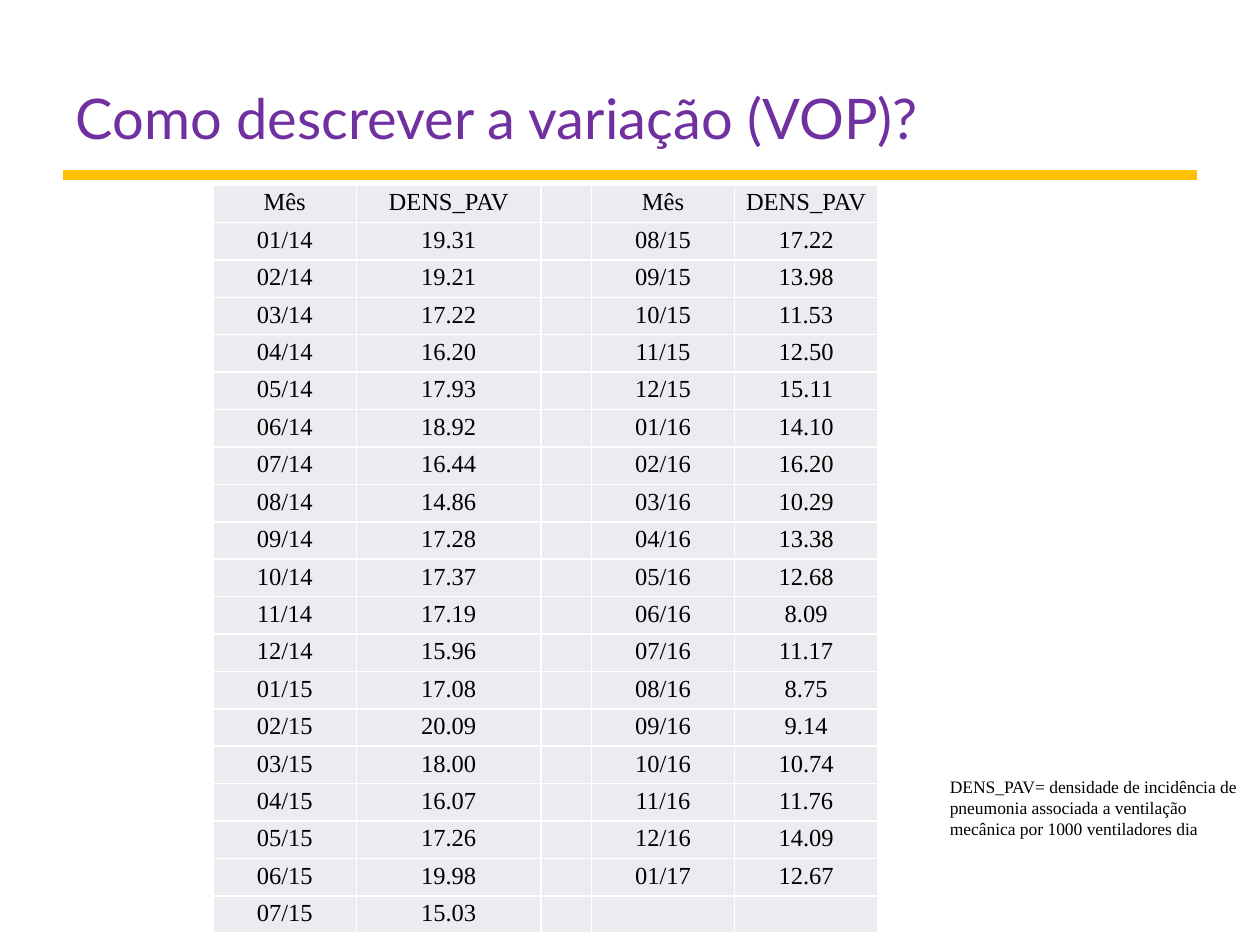
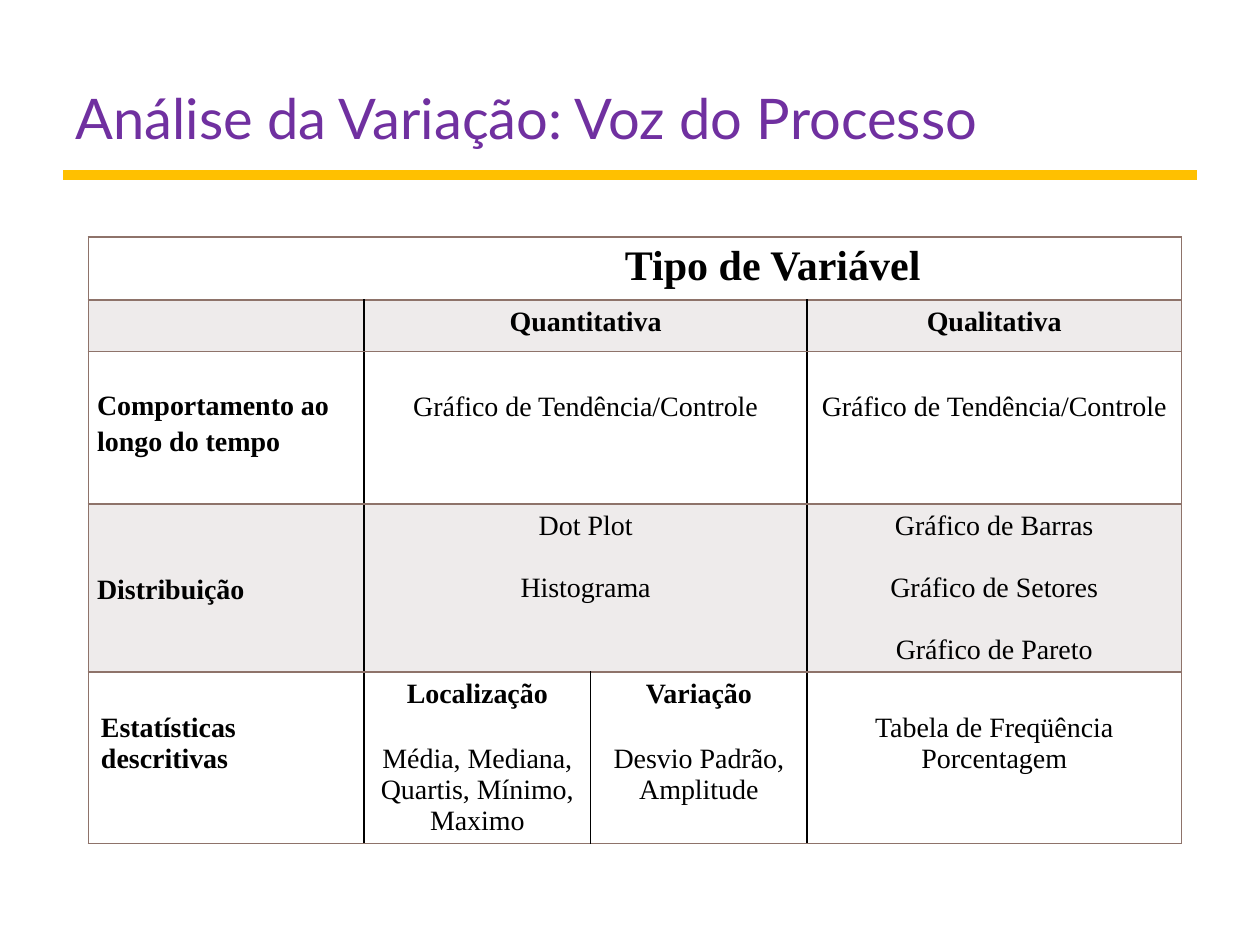
import lxml.etree
import pptx
import pptx.dml.color
import pptx.enum.shapes
import pptx.enum.text
import pptx.oxml.ns
import pptx.util

Pt = pptx.util.Pt
RGB = pptx.dml.color.RGBColor
ALIGN = pptx.enum.text.PP_ALIGN
ANCHOR = pptx.enum.text.MSO_ANCHOR
qn = pptx.oxml.ns.qn

PURPLE = RGB(0x70, 0x30, 0xA0)
GOLD = RGB(0xFF, 0xC0, 0x00)
BLACK = RGB(0x00, 0x00, 0x00)
WHITE = RGB(0xFF, 0xFF, 0xFF)
COOL_GREY = RGB(0xEB, 0xEC, 0xF0)
WARM_GREY = RGB(0xEE, 0xEB, 0xEB)
BROWN = RGB(0x8E, 0x73, 0x6A)
TITLE_FONT = "Lato"
BODY_FONT = "Times New Roman"

prs = pptx.Presentation()
prs.slide_width, prs.slide_height = Pt(720), Pt(540)


def add_text(tf, paras, size, align=ALIGN.LEFT, bold_count=0, gap=0,
             font=BODY_FONT, color=BLACK):
    for i, text in enumerate(paras):
        p = tf.paragraphs[0] if i == 0 else tf.add_paragraph()
        p.alignment = align
        if i and gap:
            p.space_before = Pt(gap)
        r = p.add_run()
        r.text = text
        r.font.name = font
        r.font.size = Pt(size)
        r.font.bold = i < bold_count
        r.font.color.rgb = color


def format_cell(cell, fill, left, right, top, bottom):
    tcPr = cell._tc.get_or_add_tcPr()
    for tag, color in (("lnL", left), ("lnR", right), ("lnT", top), ("lnB", bottom)):
        ln = lxml.etree.SubElement(tcPr, qn("a:" + tag), w=str(Pt(1)))
        if color is None:
            lxml.etree.SubElement(ln, qn("a:noFill"))
        else:
            solid = lxml.etree.SubElement(ln, qn("a:solidFill"))
            lxml.etree.SubElement(solid, qn("a:srgbClr"), val=str(color))
    cell.fill.solid()
    cell.fill.fore_color.rgb = fill


for title in ("Como descrever a variação (VOP)?", "Análise da Variação: Voz do Processo"):
    s = prs.slides.add_slide(prs.slide_layouts[5])
    rule = s.shapes.add_connector(
        pptx.enum.shapes.MSO_CONNECTOR.STRAIGHT, Pt(36), Pt(100), Pt(684), Pt(100))
    rule.line.color.rgb = GOLD
    rule.line.width = Pt(6)
    lxml.etree.SubElement(rule._element.spPr, qn("a:effectLst"))
    sp = s.shapes.title
    sp.left, sp.top, sp.width, sp.height = Pt(36), Pt(18), Pt(648), Pt(72)
    tf = sp.text_frame
    tf.auto_size = pptx.enum.text.MSO_AUTO_SIZE.NONE
    tf.vertical_anchor = ANCHOR.BOTTOM
    add_text(tf, [title], 32, font=TITLE_FONT, color=PURPLE)

density_slide, analysis_slide = prs.slides

densities = [
    "19.31", "19.21", "17.22", "16.20", "17.93", "18.92", "16.44", "14.86", "17.28", "17.37",
    "17.19", "15.96", "17.08", "20.09", "18.00", "16.07", "17.26", "19.98", "15.03",
    "17.22", "13.98", "11.53", "12.50", "15.11", "14.10", "16.20", "10.29", "13.38", "12.68",
    "8.09", "11.17", "8.75", "9.14", "10.74", "11.76", "14.09", "12.67",
]
months = [f"{n % 12 + 1:02d}/{14 + n // 12}" for n in range(len(densities))]
entries = list(zip(months, densities)) + [("", "")]
header = ("Mês", "DENS_PAV")
half = len(entries) // 2
rows = [(*header, "", *header)]
rows += [(*a, "", *b) for a, b in zip(entries[:half], entries[half:])]

col_widths = (81.8, 105.6, 28.8, 81.8, 81.8)
row_height = 21.4
table = density_slide.shapes.add_table(
    len(rows), len(col_widths), Pt(121.8), Pt(105.8),
    Pt(sum(col_widths)), Pt(row_height * len(rows))).table
table.first_row = table.horz_banding = False
for col, width in zip(table.columns, col_widths):
    col.width = Pt(width)
for ri, row in enumerate(rows):
    table.rows[ri].height = Pt(row_height)
    for ci, text in enumerate(row):
        cell = table.cell(ri, ci)
        format_cell(cell, COOL_GREY, WHITE, WHITE, WHITE, WHITE)
        cell.vertical_anchor = ANCHOR.BOTTOM
        cell.margin_left = cell.margin_right = cell.margin_top = Pt(0.7)
        cell.margin_bottom = Pt(3.6)
        if text:
            add_text(cell.text_frame, [text], 14, ALIGN.CENTER)
        else:
            p = cell.text_frame.paragraphs[0]
            lxml.etree.SubElement(p._p, qn("a:endParaRPr"), sz="1400")

note = density_slide.shapes.add_textbox(Pt(535.7), Pt(440), Pt(184.3), Pt(44))
note.text_frame.word_wrap = True
add_text(note.text_frame, [
    "DENS_PAV= densidade de incidência de pneumonia associada a ventilação "
    "mecânica por 1000 ventiladores dia"], 10)

col_widths = (157.6, 129.4, 123.8, 213.8)
row_heights = (36, 29.5, 87, 96, 98)
table = analysis_slide.shapes.add_table(
    len(row_heights), len(col_widths), Pt(50.5), Pt(135.4),
    Pt(sum(col_widths)), Pt(sum(row_heights))).table
table.first_row = table.horz_banding = False
for col, width in zip(table.columns, col_widths):
    col.width = Pt(width)
table.cell(0, 1).merge(table.cell(0, 3))
for ri in (1, 2, 3):
    table.cell(ri, 1).merge(table.cell(ri, 2))

for ri, height in enumerate(row_heights):
    table.rows[ri].height = Pt(height)
    inner = BLACK if ri else None
    split = BLACK if ri == 4 else None
    edges = (BROWN, inner, split, inner, BROWN)
    for ci in range(len(col_widths)):
        cell = table.cell(ri, ci)
        span = cell.span_width if cell.is_merge_origin else 1
        format_cell(cell, WARM_GREY if ri % 2 else WHITE,
                    edges[ci], edges[ci + span], BROWN, BROWN)

BLANK = 19.4
LINE = 17.7
C, L = ALIGN.CENTER, ALIGN.LEFT
trend = ["Gráfico de Tendência/Controle"]
contents = [
    (0, 1, ["Tipo de Variável"], 24, C, 1, 0, 0),
    (1, 1, ["Quantitativa"], 16, C, 1, 0, 0),
    (1, 3, ["Qualitativa"], 16, C, 1, 0, 0),
    (2, 0, ["Comportamento ao longo do tempo"], 16, L, 1, 0, 0),
    (2, 1, trend, 16, C, 0, 0, BLANK),
    (2, 3, trend, 16, C, 0, 0, BLANK),
    (3, 0, ["Distribuição"], 16, L, 1, 0, 0),
    (3, 1, ["Dot Plot", "Histograma"], 16, C, 0, LINE, 0),
    (3, 3, ["Gráfico de Barras", "Gráfico de Setores", "Gráfico de Pareto"], 16, C, 0, LINE, 0),
    (4, 0, ["Estatísticas descritivas"], 16, L, 1, 0, BLANK),
    (4, 1, ["Localização", "Média, Mediana, Quartis, Mínimo, Maximo"], 16, C, 1, BLANK, 0),
    (4, 2, ["Variação", "Desvio Padrão, Amplitude"], 16, C, 1, BLANK, 0),
    (4, 3, ["Tabela de Freqüência", "Porcentagem"], 16, C, 0, 0, BLANK),
]
for ri, ci, paras, size, align, bold_count, gap, offset in contents:
    cell = table.cell(ri, ci)
    cell.margin_top = Pt(3.6 + offset)
    add_text(cell.text_frame, paras, size, align, bold_count, gap)

for ri, bottom in ((2, 7), (3, 0)):
    cell = table.cell(ri, 0)
    cell.vertical_anchor = ANCHOR.MIDDLE
    cell.margin_left = cell.margin_right = Pt(5)
    cell.margin_top, cell.margin_bottom = Pt(0), Pt(bottom)
    cell.text_frame.paragraphs[0].line_spacing = 1.15

prs.save("out.pptx")
